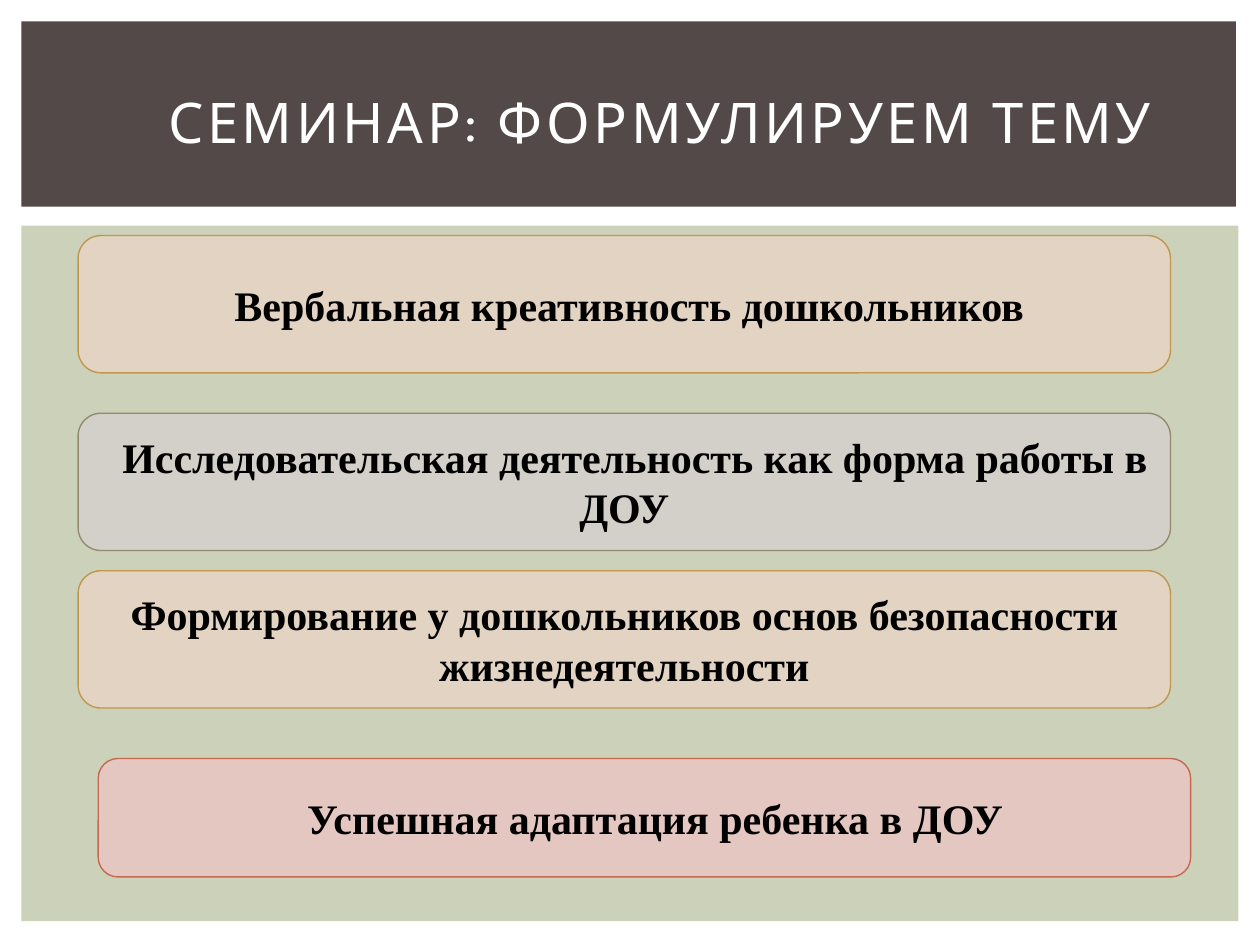
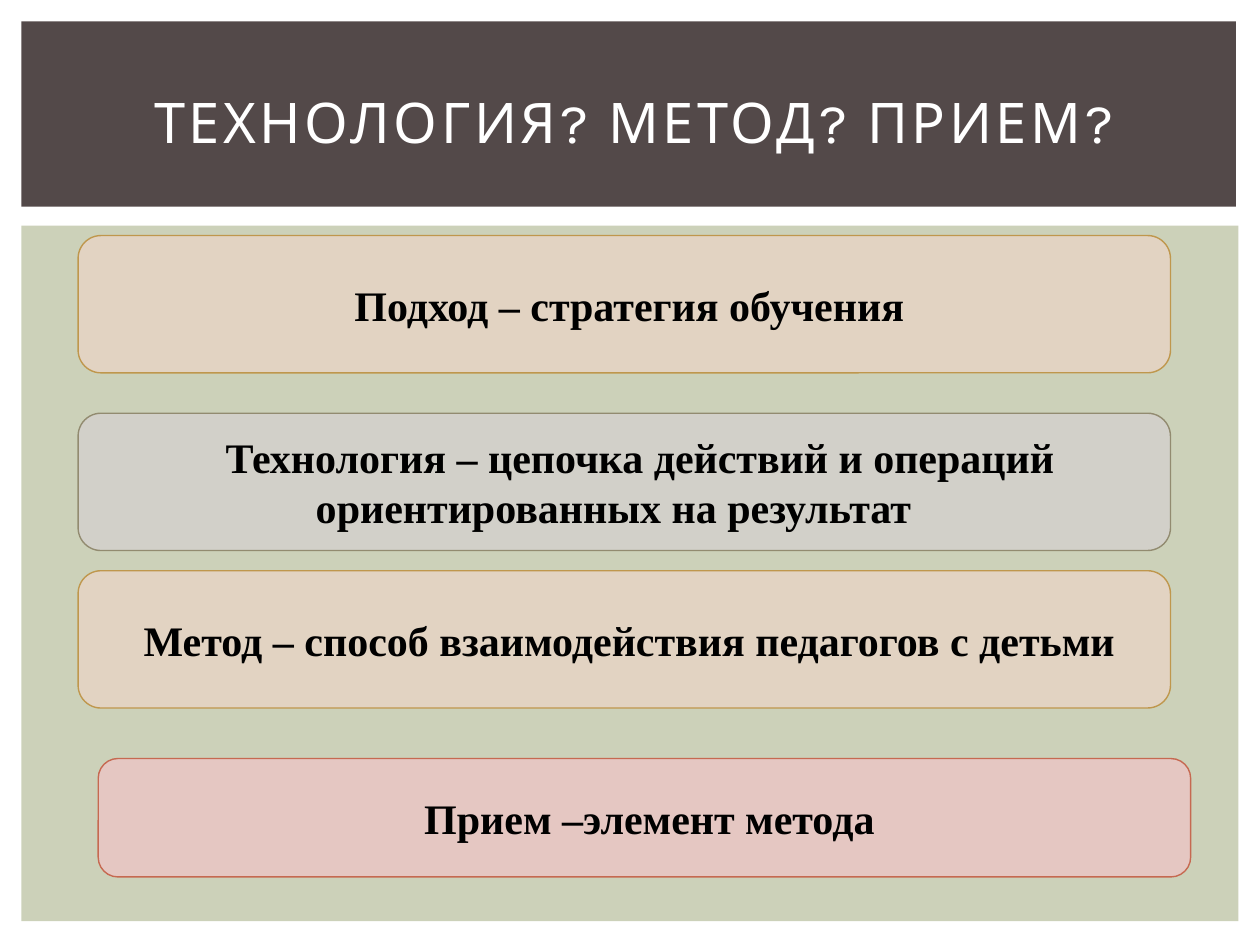
from pptx import Presentation
from pptx.dml.color import RGBColor
from pptx.enum.shapes import MSO_SHAPE
from pptx.enum.text import MSO_ANCHOR, PP_ALIGN
from pptx.util import Inches, Pt

# Content: each text comes with its first-line indent and extra right inset in inches
SLIDES = [
    {
        "title": ("СЕМИНАР: ФОРМУЛИРУЕМ ТЕМУ", 0.53, 0),
        "cards": [
            ("Вербальная креативность дошкольников", 0.08, 0),
            ("Исследовательская деятельность как форма работы в ДОУ", 0.17, 0),
            ("Формирование у дошкольников основ безопасности жизнедеятельности", 0, 0),
            ("Успешная адаптация ребенка в ДОУ", 0.17, 0),
        ],
    },
    {
        "title": ("ТЕХНОЛОГИЯ? МЕТОД? ПРИЕМ?", 0.11, 0),
        "cards": [
            ("Подход – стратегия обучения", 0.08, 0),
            ("Технология – цепочка действий и операций ориентированных на результат", 0.42, 0.17),
            ("Метод – способ взаимодействия педагогов с детьми", 0.08, 0),
            ("Прием –элемент метода", 0.08, 0),
        ],
    },
]

# Shared style
COLORS = {
    "panel": "CCD1B9", "band": "534949", "title": "FFFFFF", "text": "000000",
    "sand": "E2D3C2", "sand_line": "BF974D",
    "stone": "D2D0C9", "stone_line": "928B70",
    "rose": "E5C7C2", "rose_line": "C66951",
}
TITLE_FONT = {"name": "Karla", "size": 32, "color": "title", "bold": False}
CARD_FONT = {"name": "Times New Roman", "size": 24, "color": "text", "bold": True}
TITLE_SPACING = 2
INSET = 0.1

# Places: left, top, width, height in percent of the slide
WIDTH, HEIGHT = Inches(10), Inches(7.5)
PANEL = (1.7, 23.87, 96.6, 73.6)
BAND = (1.7, 2.27, 96.4, 19.6)
TITLE = (3.9, 5.2, 91.7, 15.33)
CARD_WIDTH = 86.7
CARD_ROWS = [  # left, top, height, colour
    (6.2, 24.93, 14.53, "sand"),
    (6.2, 43.73, 14.53, "stone"),
    (6.2, 60.4, 14.53, "sand"),
    (7.8, 80.27, 12.53, "rose"),
]


def color(name):
    return RGBColor.from_string(COLORS[name])


def place(box):
    return [round(side * share / 100)
            for side, share in zip((WIDTH, HEIGHT, WIDTH, HEIGHT), box)]


def add_block(slide, kind, box, fill, line=None):
    shape = slide.shapes.add_shape(kind, *place(box))
    shape.shadow.inherit = False
    shape.fill.solid()
    shape.fill.fore_color.rgb = color(fill)
    if line:
        shape.line.color.rgb = color(line)
        shape.line.width = Pt(0.79)
    else:
        shape.line.fill.background()
    return shape


def write(shape, content, style):
    text, indent, right = content
    frame = shape.text_frame
    frame.word_wrap = True
    frame.vertical_anchor = MSO_ANCHOR.MIDDLE
    frame.margin_right = Inches(INSET + right)
    paragraph = frame.paragraphs[0]
    paragraph.alignment = PP_ALIGN.CENTER
    properties = paragraph._p.get_or_add_pPr()
    properties.set("marL", "0")
    properties.set("indent", str(Inches(indent)))
    run = paragraph.add_run()
    run.text = text
    run.font.name = style["name"]
    run.font.size = Pt(style["size"])
    run.font.bold = style["bold"]
    run.font.color.rgb = color(style["color"])
    return run


def add_title(slide, content):
    run = write(slide.shapes.add_textbox(*place(TITLE)), content, TITLE_FONT)
    run.font._element.set("spc", str(TITLE_SPACING * 100))


def build_slide(presentation, content):
    slide = presentation.slides.add_slide(presentation.slide_layouts[6])
    # Background panel and title band
    add_block(slide, MSO_SHAPE.RECTANGLE, PANEL, "panel")
    add_block(slide, MSO_SHAPE.RECTANGLE, BAND, "band")
    add_title(slide, content["title"])
    # Cards
    for card, (left, top, height, tone) in zip(content["cards"], CARD_ROWS):
        shape = add_block(slide, MSO_SHAPE.ROUNDED_RECTANGLE,
                          (left, top, CARD_WIDTH, height), tone, tone + "_line")
        write(shape, card, CARD_FONT)


def main():
    presentation = Presentation()
    presentation.slide_width, presentation.slide_height = WIDTH, HEIGHT
    for content in SLIDES:
        build_slide(presentation, content)
    presentation.save("out.pptx")


if __name__ == "__main__":
    main()
